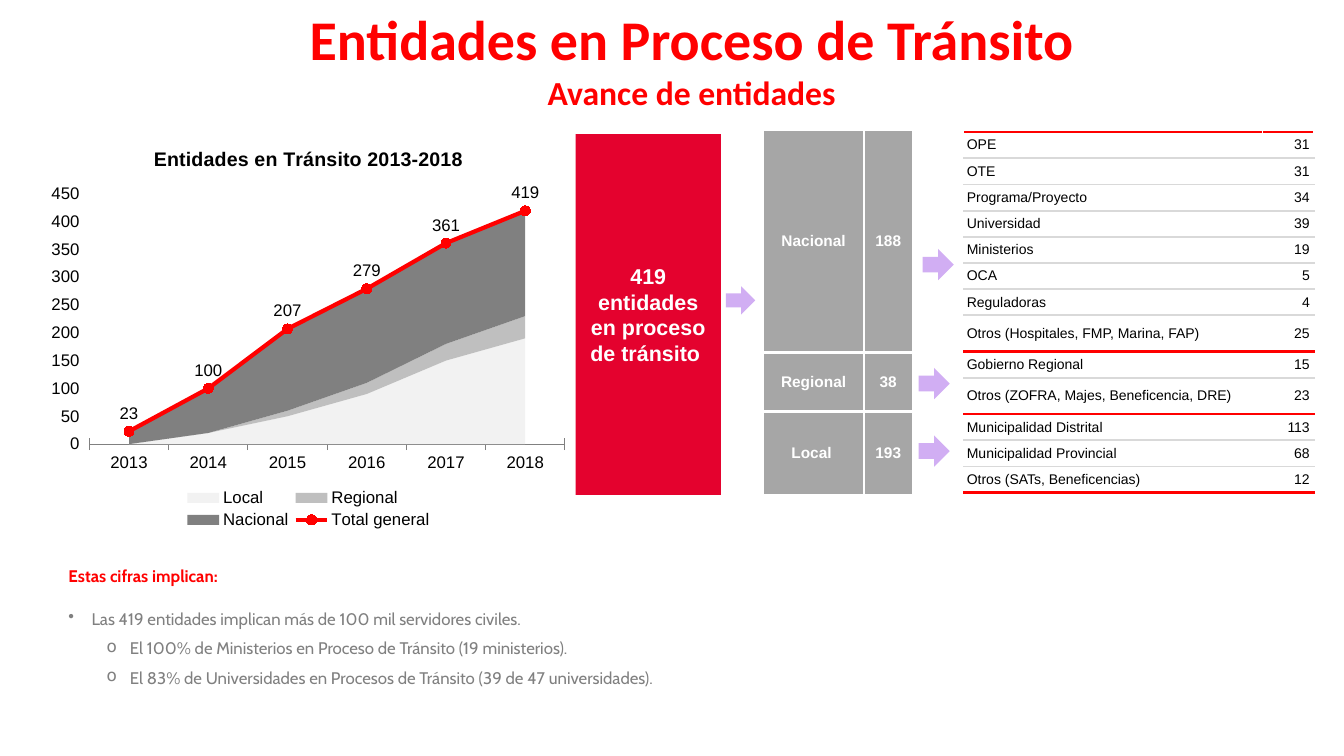
from copy import deepcopy
from lxml import etree
from pptx import Presentation
from pptx.chart.data import CategoryChartData
from pptx.dml.color import RGBColor
from pptx.enum.chart import (XL_CHART_TYPE as CT, XL_LABEL_POSITION as LP, XL_LEGEND_POSITION as LEG,
                             XL_MARKER_STYLE as MK, XL_TICK_MARK as TM)
from pptx.enum.shapes import MSO_SHAPE as SH
from pptx.enum.text import MSO_ANCHOR as ANC, PP_ALIGN as AL
from pptx.oxml import parse_xml
from pptx.oxml.ns import nsdecls, qn
from pptx.util import Inches, Pt

C = {"red": "FF0000", "crimson": "E4022E", "lilac": "D1AEF3", "white": "FFFFFF", "black": "000000",
     "local": "F2F2F2", "regional": "BFBFBF", "nacional": "808080", "level": "A6A6A6", "rule": "D9D9D9"}
YEARS = ["2013", "2014", "2015", "2016", "2017", "2018"]
AREAS = {"Local": [0, 20, 50, 90, 150, 190], "Regional": [0, 0, 10, 20, 30, 40],
         "Nacional": [20, 80, 150, 170, 180, 190]}
TOTALS = [23, 100, 207, 279, 361, 419]
LEVELS = [("Nacional", 188, 2.21), ("Regional", 38, 0.58), ("Local ", 193, 0.83)]
GROUPS = [
    [("OPE", 31), ("OTE", 31), ("Programa/Proyecto", 34), ("Universidad", 39), ("Ministerios", 19),
     ("OCA", 5), ("Reguladoras", 4), ("Otros (Hospitales, FMP, Marina, FAP)", 25)],
    [("Gobierno Regional", 15), ("Otros (ZOFRA, Majes, Beneficencia, DRE)", 23)],
    [("Municipalidad Distrital", 113), ("Municipalidad Provincial", 68), ("Otros (SATs, Beneficencias)", 12)],
]
NOTES = [(0.23, "•", "Las 419 entidades implican más de 100 mil servidores civiles."),
         (0.61, "o", "El 100% de Ministerios en Proceso de Tránsito (19 ministerios)."),
         (0.61, "o", "El 83% de Universidades en Procesos de Tránsito (39 de 47 universidades).")]


def rgb(name):
    return RGBColor.from_string(C[name])


def set_font(font, size, color, bold=False, name="Arial"):
    for key, value in {"size": Pt(size), "bold": bold, "name": name}.items():
        setattr(font, key, value)
    font.color.rgb = rgb(color)


def solid(fmt, color):
    fmt.fill.solid()
    fmt.fill.fore_color.rgb = rgb(color)


def add_run(p, text, *font):
    r = p.add_run()
    r.text = text
    set_font(r.font, *font)


def add_block(slide, kind, box, color):
    sp = slide.shapes.add_shape(kind, *map(Inches, box))
    sp.shadow.inherit = False
    solid(sp, color)
    sp.line.fill.background()
    return sp


def add_text_box(slide, box):
    tf = slide.shapes.add_textbox(*map(Inches, box)).text_frame
    tf.word_wrap = True
    return tf


def set_borders(cell, **sides):
    """Draw cell borders; each side L, R, T or B takes (colour, points)."""
    tc_pr = cell._tc.get_or_add_tcPr()
    for i, side in enumerate(s for s in "LRTB" if s in sides):
        color, width = sides[side]
        tc_pr.insert(i, parse_xml(
            f'<a:ln{side} {nsdecls("a")} w="{Pt(width)}"><a:solidFill><a:srgbClr val="{C[color]}"/>'
            f'</a:solidFill><a:prstDash val="solid"/></a:ln{side}>'))


def add_grid(slide, box, cols, rows):
    table = slide.shapes.add_table(len(rows), len(cols), *map(Inches, box)).table
    table.first_row = table.horz_banding = False
    for parts, sizes in ((table.columns, cols), (table.rows, rows)):
        for part, size in zip(parts, sizes):
            setattr(part, "width" if parts is table.columns else "height", Inches(size))
    return table


def fill_cell(cell, text, color, align, pad, font):
    for side, size in zip(("left", "right", "top", "bottom"), pad):
        setattr(cell, f"margin_{side}", Inches(size))
    cell.vertical_anchor = ANC.MIDDLE
    solid(cell, color)
    p = cell.text_frame.paragraphs[0]
    p.alignment = align
    add_run(p, str(text), *font)


def place(parent, x, y, w, h, inner=False):
    """Fix a chart part at shares of the chart's size."""
    for old in parent.findall(qn("c:layout")):
        parent.remove(old)
    target = '<c:layoutTarget val="inner"/>' if inner else ""
    layout = parse_xml(
        f'<c:layout {nsdecls("c")}><c:manualLayout>{target}<c:xMode val="edge"/><c:yMode val="edge"/>'
        f'<c:x val="{x}"/><c:y val="{y}"/><c:w val="{w}"/><c:h val="{h}"/></c:manualLayout></c:layout>')
    parent.insert(0 if inner else 1, layout)


def total_to_line(chart):
    """Move the last area series into a line plot on the same axes."""
    area = chart._chartSpace.find(".//" + qn("c:areaChart"))
    line = parse_xml(f'<c:lineChart {nsdecls("c")}><c:grouping val="standard"/>'
                     '<c:varyColors val="0"/></c:lineChart>')
    line.append(area.findall(qn("c:ser"))[-1])
    etree.SubElement(line, qn("c:marker")).set("val", "1")
    for axis in area.findall(qn("c:axId")):
        line.append(deepcopy(axis))
    area.addnext(line)


def add_progress_chart(slide, box):
    data = CategoryChartData()
    data.categories = YEARS
    for name, values in {**AREAS, "Total general": TOTALS}.items():
        data.add_series(name, values)
    chart = slide.shapes.add_chart(CT.AREA_STACKED, *map(Inches, box), data).chart
    total_to_line(chart)
    set_font(chart.font, 12, "black")
    tf = chart.chart_title.text_frame
    add_run(tf.paragraphs[0], "Entidades en Tránsito 2013-2018", 14, "black", True)
    chart.chart_title.include_in_layout = False

    areas, lines = chart.plots
    areas.vary_by_categories = False
    for series in areas.series:
        solid(series.format, series.name.lower())
    total = lines.series[0]
    total.smooth = False
    total.format.line.color.rgb = rgb("red")
    total.format.line.width = Pt(3)
    total.marker.style, total.marker.size = MK.CIRCLE, 7
    solid(total.marker.format, "red")
    total.marker.format.line.color.rgb = rgb("red")
    labels = total.data_labels
    labels.show_value, labels.position = True, LP.ABOVE
    set_font(labels.font, 12, "black")

    cat, val = chart.category_axis, chart.value_axis
    cat.has_major_gridlines = False
    cat.major_tick_mark = TM.CROSS
    cat.format.line.color.rgb = rgb("nacional")
    for key, value in {"minimum_scale": 0, "maximum_scale": 450, "major_unit": 50,
                       "major_tick_mark": TM.CROSS}.items():
        setattr(val, key, value)
    val.format.line.fill.background()
    val.major_gridlines.format.line.color.rgb = rgb("white")
    for axis in (cat, val):
        set_font(axis.tick_labels.font, 12, "black")
    chart._chartSpace.find(".//" + qn("c:crossBetween")).set("val", "between")

    chart.has_legend = True
    chart.legend.position, chart.legend.include_in_layout = LEG.BOTTOM, False
    set_font(chart.legend.font, 12, "black")
    place(chart.legend._element, 0.26, 0.88, 0.48, 0.12)
    place(chart._chartSpace.find(".//" + qn("c:plotArea")), 0.09, 0.16, 0.89, 0.62, inner=True)


def add_total_block(slide, box):
    sp = add_block(slide, SH.RECTANGLE, box, "crimson")
    tf = sp.text_frame
    tf.word_wrap, tf.vertical_anchor = True, ANC.MIDDLE
    p = tf.paragraphs[0]
    p.alignment = AL.CENTER
    add_run(p, "419 entidades en proceso de tránsito ", 15.3, "white", True)


def add_level_table(slide, box):
    table = add_grid(slide, box, [1, box[2] - 1], [h for _, _, h in LEVELS])
    gap = ("white", 2.25)
    for i, level in enumerate(LEVELS):
        for j, text in enumerate(level[:2]):
            cell = table.cell(i, j)
            fill_cell(cell, text, "level", AL.CENTER, [0.03] * 4, (11, "white", True))
            set_borders(cell, B=gap, **({"T": gap} if i else {}))


def add_detail_table(slide, box):
    rows = [(name, count, k == 0, k == len(group) - 1)
            for group in GROUPS for k, (name, count) in enumerate(group)]
    heights = [0.36 if name.startswith("Otros (") and i < len(rows) - 1 else 0.26
               for i, (name, *_) in enumerate(rows)]
    table = add_grid(slide, box, [box[2] - 0.51, 0.51], heights)
    edge, rule = ("red", 2.25), ("rule", 1.5)
    for i, (name, count, first, last) in enumerate(rows):
        for j, (text, align, pad) in enumerate([(name, AL.LEFT, 0.03), (count, AL.RIGHT, 0.04)]):
            cell = table.cell(i, j)
            fill_cell(cell, text, "white", align, (pad, pad, 0, 0), (10, "black"))
            set_borders(cell, L=("white", 1), R=("white", 1.5 if j else 1),
                        T=edge if first else rule, B=edge if last else rule)


def add_heading(slide, box):
    tf = add_text_box(slide, box)
    for p, text, size in ((tf.paragraphs[0], "Entidades en Proceso de Tránsito", 40),
                          (tf.add_paragraph(), "Avance de entidades", 24)):
        p.alignment = AL.CENTER
        add_run(p, text, size, "red", True, "Calibri")


def add_notes(slide, box):
    tf = add_text_box(slide, box)
    p = tf.paragraphs[0]
    p.alignment, p.space_after = AL.JUSTIFY, Pt(14.6)
    add_run(p, "Estas cifras implican:", 12, "red", True, "Cabin")
    for margin, bullet, text in NOTES:
        p = tf.add_paragraph()
        for key, value in {"alignment": AL.JUSTIFY, "line_spacing": 1.14, "space_after": Pt(4.5),
                           "level": int(bullet == "o")}.items():
            setattr(p, key, value)
        p_pr = p._p.get_or_add_pPr()
        p_pr.set("marL", str(Inches(margin)))
        p_pr.set("indent", str(Inches(-0.23)))
        etree.SubElement(p_pr, qn("a:buChar")).set("char", bullet)
        add_run(p, text, 12, "nacional", False, "Cabin")


def main():
    prs = Presentation()
    prs.slide_width, prs.slide_height = Inches(13.33), Inches(7.5)
    slide = prs.slides.add_slide(prs.slide_layouts[6])
    add_progress_chart(slide, (0.41, 1.28, 5.3, 4.01))
    add_level_table(slide, (7.57, 1.29, 1.48, 3.62))
    add_detail_table(slide, (9.56, 1.31, 3.47, 3.6))
    add_total_block(slide, (5.71, 1.33, 1.44, 3.58))
    for x, y, w, h in ((7.2, 2.84, 0.29, 0.28), (9.15, 2.47, 0.31, 0.31),
                       (9.11, 3.65, 0.31, 0.31), (9.11, 4.32, 0.31, 0.31)):
        add_block(slide, SH.RIGHT_ARROW, (x, y, w, h), "lilac")
    add_heading(slide, (0.55, 0, 12.62, 0.76))
    add_notes(slide, (0.58, 5.56, 12.25, 1.61))
    prs.save("out.pptx")


if __name__ == "__main__":
    main()
